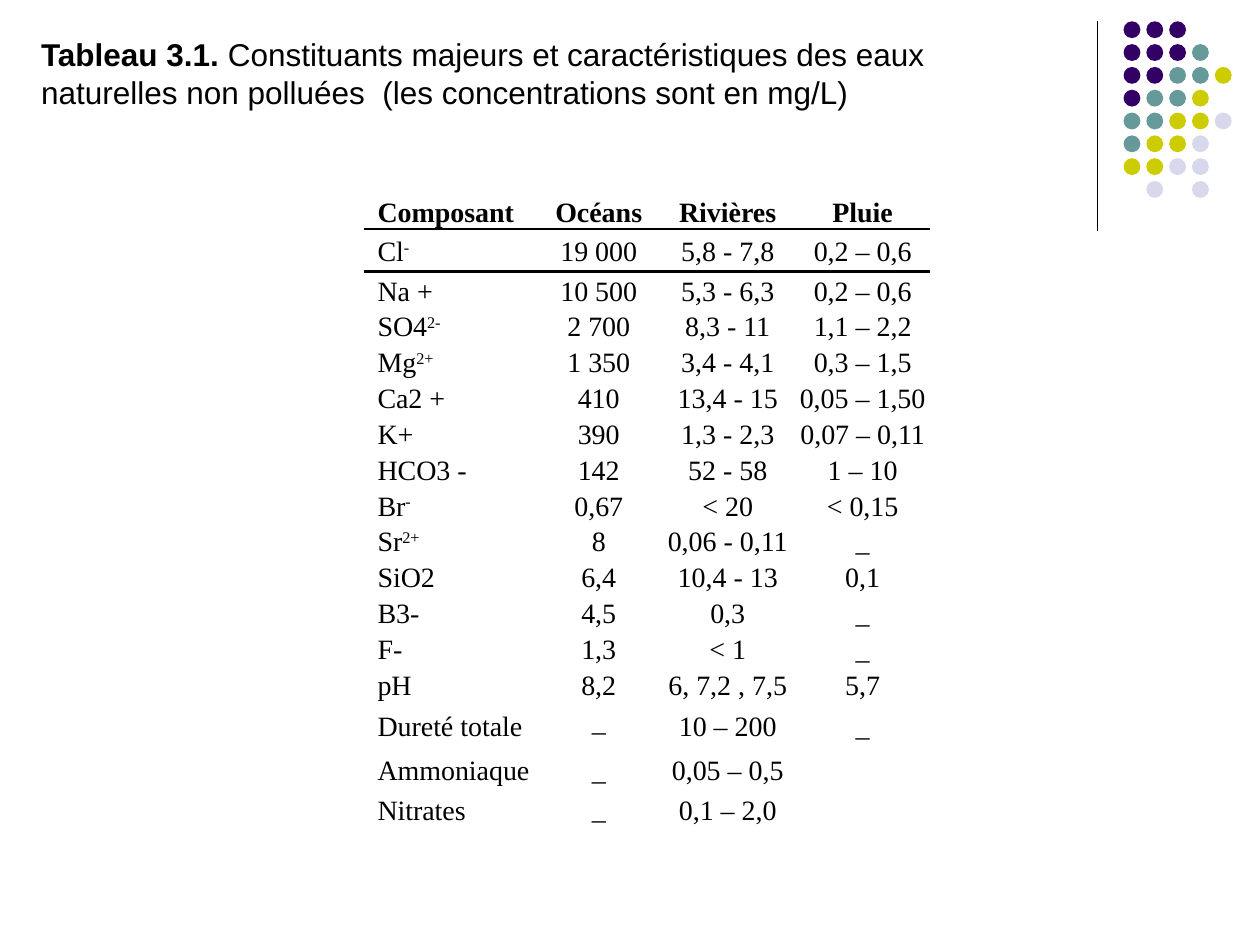
import pptx
import pptx.util
import pptx.dml.color
import pptx.enum.shapes
import pptx.enum.text
import pptx.oxml
import pptx.oxml.ns
from lxml import etree

Cm, Pt = pptx.util.Cm, pptx.util.Pt
ALIGN = pptx.enum.text.PP_ALIGN
ANCHOR = pptx.enum.text.MSO_ANCHOR

COLORS = {"ink": "000000", "purple": "330066", "teal": "669999",
          "olive": "CCCC00", "lavender": "D8D8EC"}

TITLE = [("Tableau 3.1.", True),
         (" Constituants majeurs et caractéristiques des eaux naturelles "
          "non polluées  (les concentrations sont en mg/L)", False)]

# One letter per dot: the first letter of its colour, or a space for a gap
DOTS = ["ppp", "pppt", "pptto", "ptto", "ttool", "tool", "ooll", " l l"]

# A caret starts a superscript
ROWS = [
    ("Composant", "Océans", "Rivières", "Pluie"),
    ("Cl^-", "19 000", "5,8 - 7,8", "0,2 – 0,6"),
    ("Na +", "10 500", "5,3 - 6,3", "0,2 – 0,6"),
    ("SO4^2-", "2 700", "8,3 - 11", "1,1 – 2,2"),
    ("Mg^2+", "1 350", "3,4 - 4,1", "0,3 – 1,5"),
    ("Ca2 +", "410", "13,4 - 15", "0,05 – 1,50"),
    ("K+", "390", "1,3 - 2,3", "0,07 – 0,11"),
    ("HCO3 -", "142", "52 - 58", "1 – 10"),
    ("Br^-", "0,67", "< 20", "< 0,15"),
    ("Sr^2+", "8", "0,06 - 0,11", "_"),
    ("SiO2", "6,4", "10,4 - 13", "0,1"),
    ("B3-", "4,5", "0,3", "_"),
    ("F-", "1,3", "< 1", "_"),
    ("pH", "8,2", "6, 7,2 , 7,5", "5,7"),
    ("Dureté totale", "_", "10 – 200", "_"),
    ("Ammoniaque", "_", "0,05 – 0,5", ""),
    ("Nitrates", "_", "0,1 – 2,0", ""),
]
COLUMN_WIDTHS = [3.48, 2.46, 2.74, 2.7]
ROW_HEIGHT = 0.6
TALL_ROWS = {0: 0.66, 1: 0.86, 13: 0.74, 14: 0.91, 15: 0.86, 16: 0.71}
TOP_CELLS = {(14, 1), (16, 1)}


def rgb(name):
    return pptx.dml.color.RGBColor.from_string(COLORS[name])


def style_span(span, font, size, bold):
    span.font.name, span.font.size, span.font.bold = font, Pt(size), bold
    span.font.color.rgb = rgb("ink")


def add_title(page):
    box = page.shapes.add_textbox(Cm(0.58), Cm(0.58), Cm(20.83), Cm(1.8))
    box.text_frame.word_wrap = True
    para = box.text_frame.paragraphs[0]
    for text, bold in TITLE:
        span = para.add_run()
        span.text = text
        style_span(span, "Arial", 18, bold)


def add_ornament(page):
    rule = page.shapes.add_connector(pptx.enum.shapes.MSO_CONNECTOR.STRAIGHT,
                                     Cm(22.12), Cm(0.43), Cm(22.12), Cm(4.65))
    rule.line.color.rgb = rgb("ink")
    rule.line.width = Pt(0.75)
    etree.SubElement(rule._element.spPr, pptx.oxml.ns.qn("a:effectLst"))

    left, top, pitch, size = 22.65, 0.43, 0.46, 0.34
    names = {name[0]: name for name in COLORS}
    group = page.shapes.add_group_shape()
    for row, letters in enumerate(DOTS):
        for col, letter in enumerate(letters):
            if letter == " ":
                continue
            dot = group.shapes.add_shape(
                pptx.enum.shapes.MSO_SHAPE.OVAL, Cm(left + col * pitch),
                Cm(top + row * pitch), Cm(size), Cm(size))
            dot.shadow.inherit = False
            dot.fill.solid()
            dot.fill.fore_color.rgb = rgb(names[letter])
            dot.line.fill.background()


def add_border(cell, side):
    border = pptx.oxml.parse_xml(
        f'<a:{side} {pptx.oxml.ns.nsdecls("a")} w="{Pt(1.5)}"><a:solidFill>'
        f'<a:srgbClr val="{COLORS["ink"]}"/></a:solidFill></a:{side}>')
    cell._tc.get_or_add_tcPr().insert(0, border)


def fill_cell(cell, text, row, col):
    cell.fill.background()
    cell.margin_left = cell.margin_right = Cm(0)
    cell.margin_top = cell.margin_bottom = Cm(0)
    at_top = row == 0 or (row, col) in TOP_CELLS
    cell.vertical_anchor = ANCHOR.TOP if at_top else ANCHOR.MIDDLE
    if row < 2:
        add_border(cell, "lnT" if row else "lnB")
    if not text:
        return
    para = cell.text_frame.paragraphs[0]
    para.line_spacing = 1.15
    if col:
        para.alignment = ALIGN.CENTER
    else:
        para.alignment = ALIGN.LEFT
        para._p.get_or_add_pPr().set("marL", str(Cm(0.25)))
    for index, part in enumerate(text.split("^")):
        span = para.add_run()
        span.text = part
        style_span(span, "Times New Roman", 16, row == 0)
        if index:
            span._r.get_or_add_rPr().set("baseline", "30000")


def add_composition_table(page):
    heights = [TALL_ROWS.get(row, ROW_HEIGHT) for row in range(len(ROWS))]
    table = page.shapes.add_table(
        len(ROWS), len(COLUMN_WIDTHS), Cm(7.36), Cm(3.89),
        Cm(sum(COLUMN_WIDTHS)), Cm(sum(heights))).table
    table.first_row = table.horz_banding = False
    for column, width in zip(table.columns, COLUMN_WIDTHS):
        column.width = Cm(width)
    for row, (height, texts) in enumerate(zip(heights, ROWS)):
        table.rows[row].height = Cm(height)
        for col, text in enumerate(texts):
            fill_cell(table.cell(row, col), text, row, col)


def main():
    deck = pptx.Presentation()
    deck.slide_width, deck.slide_height = Cm(25.4), Cm(19.05)
    page = deck.slides.add_slide(deck.slide_layouts[6])
    add_ornament(page)
    add_composition_table(page)
    add_title(page)
    deck.save("out.pptx")


if __name__ == "__main__":
    main()
